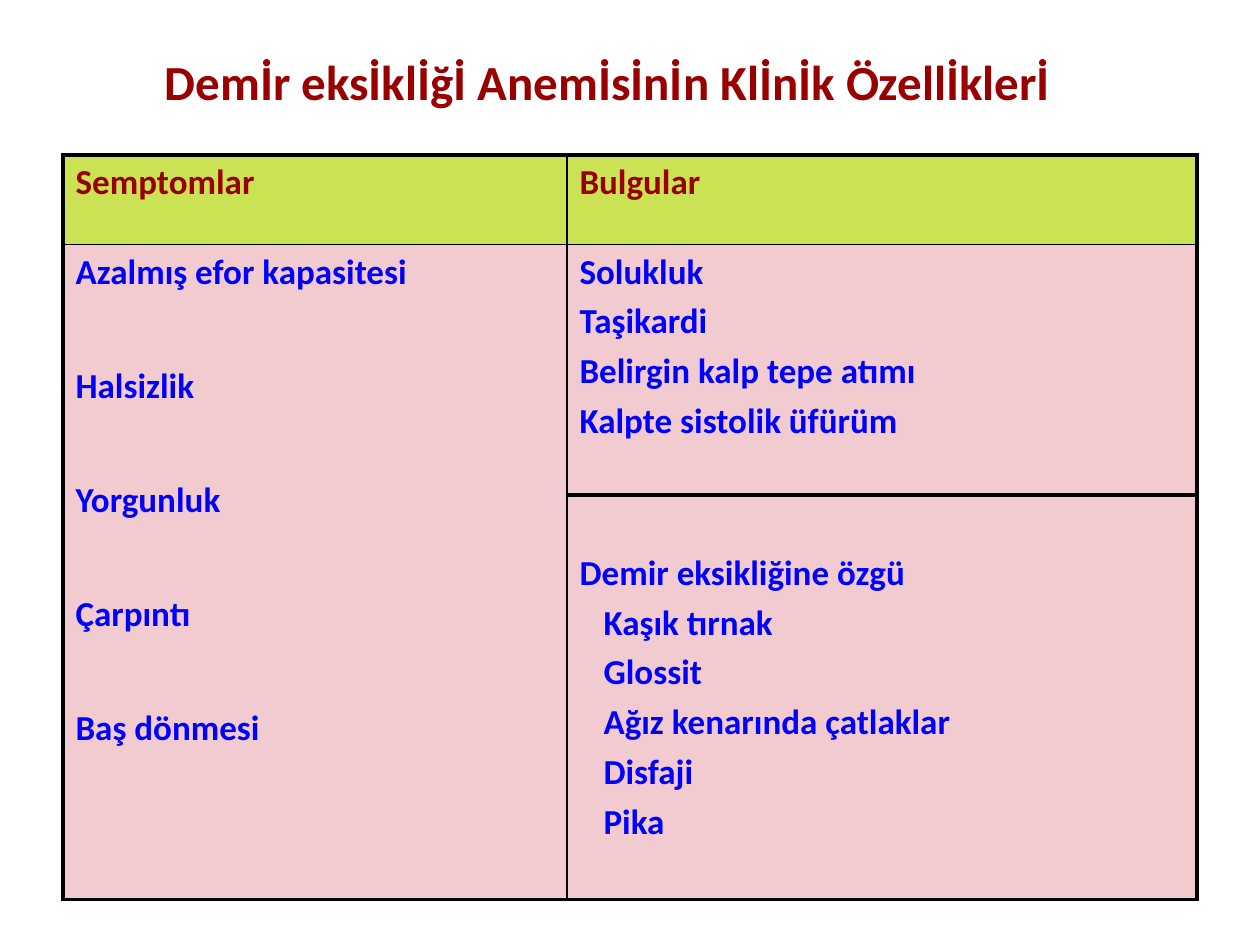
from dataclasses import dataclass

from lxml.etree import SubElement
from pptx import Presentation
from pptx.dml.color import RGBColor
from pptx.enum.text import MSO_ANCHOR, PP_ALIGN
from pptx.oxml.ns import qn
from pptx.util import Inches, Pt

COLORS = {
    "heading": "990000",
    "finding": "0000FF",
    "header_fill": "CAE254",
    "body_fill": "F1CBCF",
    "border": "000000",
}
FONT = "Calibri"
THICK, THIN = 2.25, 1
COLUMN_WIDTHS = (4, 5)
ROW_HEIGHTS = (0.71, 1.99, 3.21)


@dataclass(frozen=True)
class Section:
    row: int
    column: int
    lines: tuple[str, ...]
    color: str = "finding"
    fill: str = "body_fill"
    line_spacing: float = 1.0
    top_margin: float = 0.05
    indent: float = 0
    top_border: float = THIN
    bottom_border: float = THICK


SECTIONS = (
    Section(0, 0, ("Semptomlar",), "heading", "header_fill",
            top_border=THICK, bottom_border=THIN),
    Section(0, 1, ("Bulgular",), "heading", "header_fill",
            top_border=THICK, bottom_border=THIN),
    Section(1, 0, ("Azalmış efor kapasitesi", "Halsizlik", "Yorgunluk",
                   "Çarpıntı", "Baş dönmesi"), line_spacing=2.5),
    Section(2, 0, ()),
    Section(1, 1, ("Solukluk", "Taşikardi", "Belirgin kalp tepe atımı",
                   "Kalpte sistolik üfürüm")),
    Section(2, 1, ("Demir eksikliğine özgü", "Kaşık tırnak", "Glossit",
                   "Ağız kenarında çatlaklar", "Disfaji", "Pika"),
            top_margin=0.45, indent=0.19, top_border=THICK),
)


def style_text(paragraph, size: float, color: str) -> None:
    """Apply the slide's bold font to every run of a paragraph."""
    for run in paragraph.runs:
        run.font.name = FONT
        run.font.size = Pt(size)
        run.font.bold = True
        run.font.color.rgb = RGBColor.from_string(COLORS[color])


def add_borders(cell, section: Section) -> None:
    """Draw the four borders of a cell, thick along the table's sides."""
    properties = cell._tc.get_or_add_tcPr()
    widths = {
        "a:lnL": THICK if section.column == 0 else THIN,
        "a:lnR": THIN if section.column == 0 else THICK,
        "a:lnT": section.top_border,
        "a:lnB": section.bottom_border,
    }
    for side, width in widths.items():
        line = SubElement(properties, qn(side), w=str(Pt(width)))
        fill = SubElement(line, qn("a:solidFill"))
        SubElement(fill, qn("a:srgbClr"), val=COLORS["border"])


def fill_section(table, section: Section) -> None:
    """Write and format one section of the table."""
    cell = table.cell(section.row, section.column)
    add_borders(cell, section)
    cell.fill.solid()
    cell.fill.fore_color.rgb = RGBColor.from_string(COLORS[section.fill])
    cell.margin_top = Inches(section.top_margin)
    if not section.lines:
        return
    cell.text_frame.text = "\n".join(section.lines)
    for position, paragraph in enumerate(cell.text_frame.paragraphs):
        paragraph.space_before = Pt(4)
        style_text(paragraph, 20, section.color)
        if position:
            paragraph.line_spacing = section.line_spacing
            if section.indent:
                paragraph._p.get_or_add_pPr().set("marL", str(Inches(section.indent)))


def add_title(slide) -> None:
    """Add the centred slide title."""
    title = slide.shapes.add_textbox(Inches(0.31), Inches(0.16), Inches(9.02), Inches(0.97))
    frame = title.text_frame
    frame.word_wrap = True
    frame.vertical_anchor = MSO_ANCHOR.MIDDLE
    frame.text = "Demİr eksİklİğİ Anemİsİnİn Klİnİk Özellİklerİ"
    frame.paragraphs[0].alignment = PP_ALIGN.CENTER
    style_text(frame.paragraphs[0], 28, "heading")


def add_features_table(slide) -> None:
    """Add the table of symptoms and findings."""
    table = slide.shapes.add_table(
        len(ROW_HEIGHTS), len(COLUMN_WIDTHS), Inches(0.5), Inches(1.23),
        Inches(sum(COLUMN_WIDTHS)), Inches(sum(ROW_HEIGHTS)),
    ).table
    for column, width in zip(table.columns, COLUMN_WIDTHS):
        column.width = Inches(width)
    for row, height in zip(table.rows, ROW_HEIGHTS):
        row.height = Inches(height)
    table.cell(1, 0).merge(table.cell(2, 0))
    for section in SECTIONS:
        fill_section(table, section)


def main() -> None:
    """Build and save the slide."""
    presentation = Presentation()
    presentation.slide_width = Inches(10)
    presentation.slide_height = Inches(7.5)
    slide = presentation.slides.add_slide(presentation.slide_layouts[6])
    add_title(slide)
    add_features_table(slide)
    presentation.save("out.pptx")


if __name__ == "__main__":
    main()
